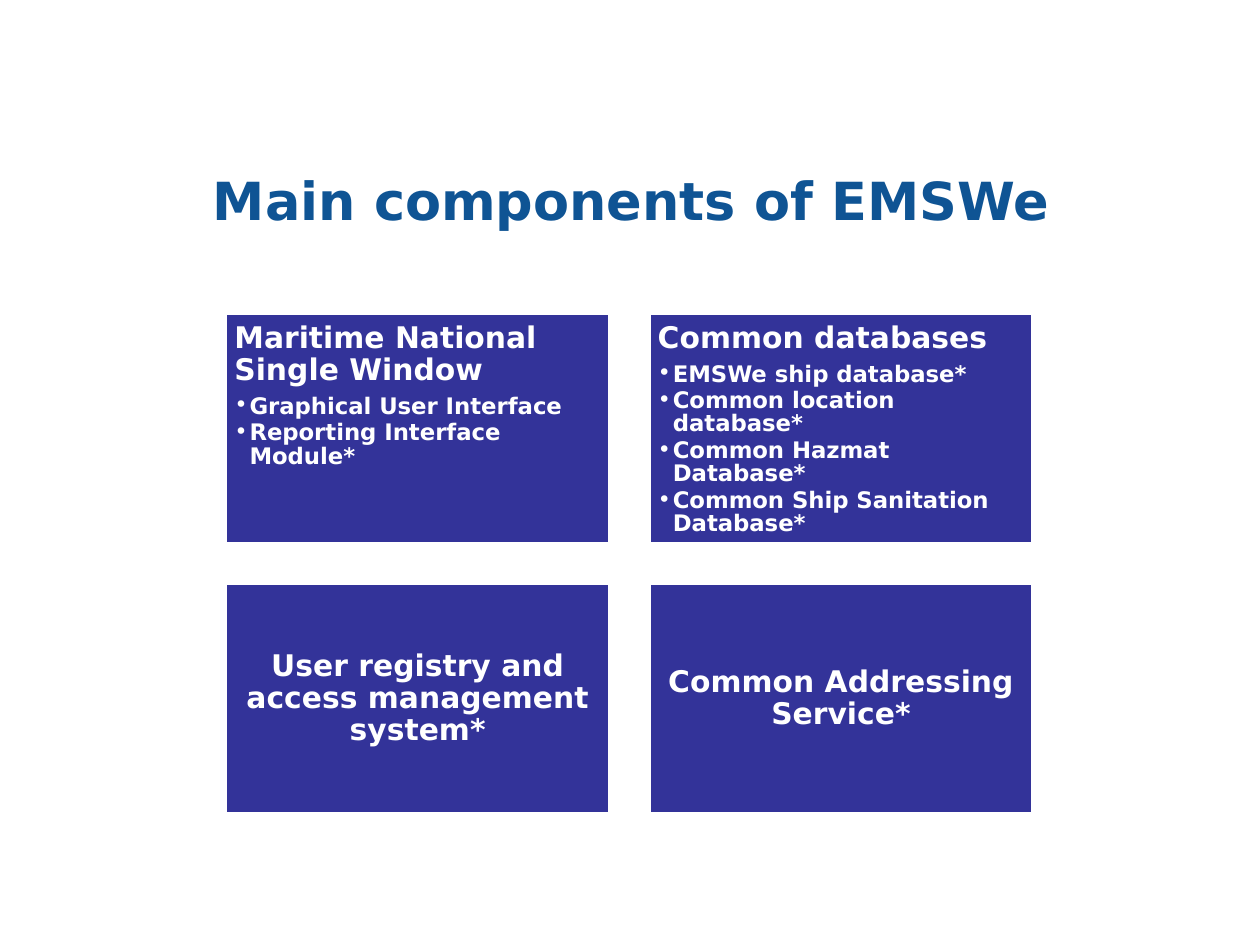
from dataclasses import dataclass

from lxml import etree
from pptx import Presentation
from pptx.dml.color import RGBColor
from pptx.enum import shapes, text
from pptx.oxml.ns import qn
from pptx.util import Inches, Pt


@dataclass(frozen=True)
class Theme:
    font: str = "DejaVu Sans"
    title_color: RGBColor = RGBColor(0x0F, 0x54, 0x94)
    card_fill: RGBColor = RGBColor(0x33, 0x33, 0x99)
    white: RGBColor = RGBColor(0xFF, 0xFF, 0xFF)
    title_size: Pt = Pt(30)
    heading_size: Pt = Pt(17)
    item_size: Pt = Pt(13)


@dataclass(frozen=True)
class Component:
    heading: str
    items: tuple[str, ...] = ()


THEME = Theme()
TITLE = "Main components of EMSWe"
COMPONENTS = (
    Component("Maritime National Single Window",
              ("Graphical User Interface", "Reporting Interface Module*")),
    Component("Common databases",
              ("EMSWe ship database*", "Common location database*",
               "Common Hazmat Database*", "Common Ship Sanitation Database*")),
    Component("User registry and access management system*"),
    Component("Common Addressing Service*"),
)

COLUMNS = 2
GRID_LEFT, GRID_TOP = Inches(1.79), Inches(2.49)
CARD_WIDTH, CARD_HEIGHT = Inches(3.05), Inches(1.83)
GAP = Inches(0.31)
INSET = Inches(0.07)
HANGING = Inches(0.12)


def write(paragraph, words: str, size: Pt, color: RGBColor) -> None:
    """Add bold words in the theme font."""
    run = paragraph.add_run()
    run.text = words
    formats = {"name": THEME.font, "size": size, "bold": True}
    for attribute, value in formats.items():
        setattr(run.font, attribute, value)
    run.font.color.rgb = color


def add_bullet(paragraph) -> None:
    properties = paragraph._p.get_or_add_pPr()
    properties.set("marL", str(HANGING))
    properties.set("indent", str(-HANGING))
    etree.SubElement(properties, qn("a:buFont")).set("typeface", THEME.font)
    etree.SubElement(properties, qn("a:buChar")).set("char", "•")


def space(paragraph, lines: float, after: Pt, alignment: text.PP_ALIGN) -> None:
    formats = {"line_spacing": lines, "space_after": after, "alignment": alignment}
    for attribute, value in formats.items():
        setattr(paragraph, attribute, value)


def add_title(slide) -> None:
    box = slide.shapes.add_textbox(Inches(0.51), Inches(1.07), Inches(9), Inches(1.02))
    frame = box.text_frame
    frame.word_wrap = True
    frame.vertical_anchor = text.MSO_ANCHOR.MIDDLE
    heading = frame.paragraphs[0]
    heading.alignment = text.PP_ALIGN.CENTER
    write(heading, TITLE, THEME.title_size, THEME.title_color)


def add_card(slide, component: Component, row: int, column: int) -> None:
    """Draw a component; one without items has its heading centred."""
    card = slide.shapes.add_shape(
        shapes.MSO_SHAPE.RECTANGLE,
        GRID_LEFT + column * (CARD_WIDTH + GAP),
        GRID_TOP + row * (CARD_HEIGHT + GAP),
        CARD_WIDTH, CARD_HEIGHT)
    card.shadow.inherit = False
    card.fill.solid()
    card.fill.fore_color.rgb = THEME.card_fill
    card.line.color.rgb = THEME.white
    card.line.width = Pt(2)

    frame = card.text_frame
    anchor = text.MSO_ANCHOR.TOP if component.items else text.MSO_ANCHOR.MIDDLE
    formats = {"word_wrap": True, "vertical_anchor": anchor,
               "margin_left": INSET, "margin_right": INSET,
               "margin_top": INSET, "margin_bottom": INSET}
    for attribute, value in formats.items():
        setattr(frame, attribute, value)

    heading = frame.paragraphs[0]
    alignment = text.PP_ALIGN.LEFT if component.items else text.PP_ALIGN.CENTER
    space(heading, 0.9, Pt(5), alignment)
    write(heading, component.heading, THEME.heading_size, THEME.white)
    for words in component.items:
        item = frame.add_paragraph()
        item.level = 1
        add_bullet(item)
        space(item, 0.85, Pt(2), text.PP_ALIGN.LEFT)
        write(item, words, THEME.item_size, THEME.white)


def main() -> None:
    deck = Presentation()
    deck.slide_width, deck.slide_height = Inches(10), Inches(7.5)
    slide = deck.slides.add_slide(deck.slide_layouts[6])
    add_title(slide)
    for index, component in enumerate(COMPONENTS):
        add_card(slide, component, *divmod(index, COLUMNS))
    deck.save("out.pptx")


if __name__ == "__main__":
    main()
